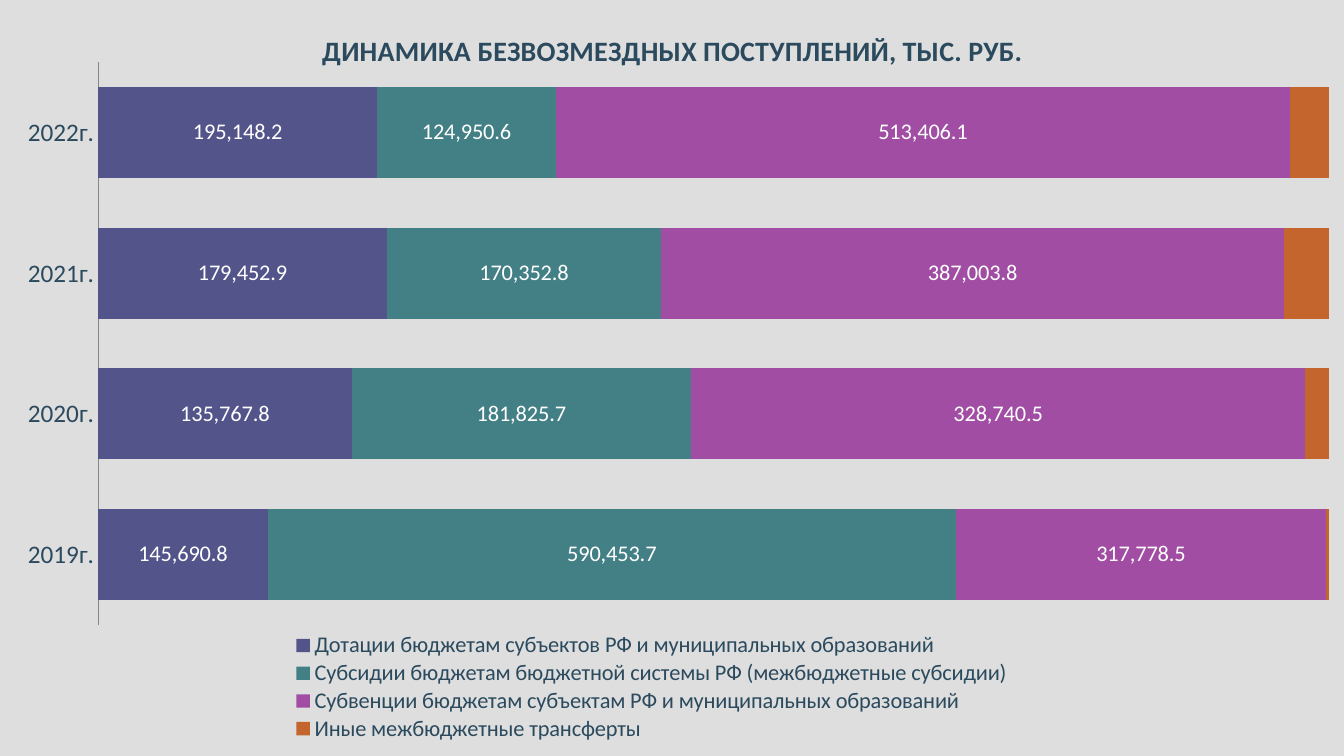
"""Build a slide with a 100% stacked bar chart of budget transfers by year."""
from pptx import Presentation
from pptx.chart.data import CategoryChartData
from pptx.dml.color import RGBColor
from pptx.enum.chart import (XL_CHART_TYPE as ChartType, XL_LABEL_POSITION as LabelPosition,
                             XL_LEGEND_POSITION as LegendPosition, XL_TICK_MARK as TickMark)
from pptx.oxml import parse_xml
from pptx.oxml.ns import nsdecls, qn
from pptx.util import Inches, Pt

INK = "2B4A5E"
NUMBER_FORMAT = "#,##0.0"
YEARS = ["2019г.", "2020г.", "2021г.", "2022г."]
TRANSFERS = [
    ("Дотации бюджетам субъектов РФ и муниципальных образований", "53548A",
     [145690.8, 135767.8, 179452.9, 195148.2]),
    ("Субсидии бюджетам бюджетной системы РФ (межбюджетные субсидии)", "438086",
     [590453.7, 181825.7, 170352.8, 124950.6]),
    ("Субвенции бюджетам субъектам РФ и муниципальных образований", "A04DA3",
     [317778.5, 328740.5, 387003.8, 513406.1]),
    ("Иные межбюджетные трансферты", "C4652D", [2600, 12900, 28000, 27300]),
]


def style(font, size, color, bold=False):
    font.name, font.size, font.bold = "Calibri", Pt(size), bold
    font.color.rgb = RGBColor.from_string(color)


def place(element, before, target="", **fractions):
    for old in element.findall(qn("c:layout")):
        element.remove(old)
    modes = "".join(f'<c:{side}Mode val="edge"/>' for side in "xy")
    sizes = "".join(f'<c:{key} val="{value}"/>' for key, value in fractions.items())
    layout = parse_xml(f'<c:layout {nsdecls("c")}><c:manualLayout>{target}{modes}{sizes}'
                       '</c:manualLayout></c:layout>')
    element.find(qn(before)).addprevious(layout)


deck = Presentation()
deck.slide_width, deck.slide_height = Inches(13.33), Inches(7.5)
page = deck.slides.add_slide(deck.slide_layouts[6])
page.background.fill.solid()
page.background.fill.fore_color.rgb = RGBColor.from_string("DEDEDE")

data = CategoryChartData(number_format=NUMBER_FORMAT)
data.categories = YEARS
for name, color, values in TRANSFERS:
    data.add_series(name, values)
chart = page.shapes.add_chart(ChartType.BAR_STACKED_100, Inches(0), Inches(0),
                              Inches(13.33), Inches(7.37), data).chart
style(chart.font, 10, "000000")

title = chart.chart_title
title.text_frame.text = "ДИНАМИКА БЕЗВОЗМЕЗДНЫХ ПОСТУПЛЕНИЙ, ТЫС. РУБ. "
style(title.text_frame.paragraphs[0].runs[0].font, 20, INK, bold=True)
place(title._element, "c:overlay", x=0.236, y=0.035)

plot = chart.plots[0]
plot.gap_width, plot.overlap, plot.vary_by_categories = 55, 100, False
place(chart._chartSpace.chart.plotArea, "c:barChart", '<c:layoutTarget val="inner"/>',
      x=0.073, y=0.084, w=0.916, h=0.757)

for series, (name, color, values) in zip(plot.series, TRANSFERS):
    series.format.fill.solid()
    series.format.fill.fore_color.rgb = RGBColor.from_string(color)
for series in list(plot.series)[:3]:
    labels = series.data_labels
    labels.show_value, labels.position = True, LabelPosition.CENTER
    labels.number_format, labels.number_format_is_linked = NUMBER_FORMAT, False
    style(labels.font, 16, "FFFFFF")

years = chart.category_axis
years.major_tick_mark = years.minor_tick_mark = TickMark.NONE
years.format.line.color.rgb = RGBColor.from_string("868686")
years.format.line.width = Pt(0.75)
style(years.tick_labels.font, 18, INK)

amounts = chart.value_axis
amounts.visible = amounts.has_major_gridlines = False
amounts.minimum_scale, amounts.maximum_scale = 0, 1
amounts.tick_labels.number_format = NUMBER_FORMAT
amounts.tick_labels.number_format_is_linked = False

chart.has_legend = True
legend = chart.legend
legend.position, legend.include_in_layout = LegendPosition.BOTTOM, False
style(legend.font, 16, INK)
place(legend._element, "c:overlay", x=0.21, y=0.85, w=0.55, h=0.15)

deck.save("out.pptx")
